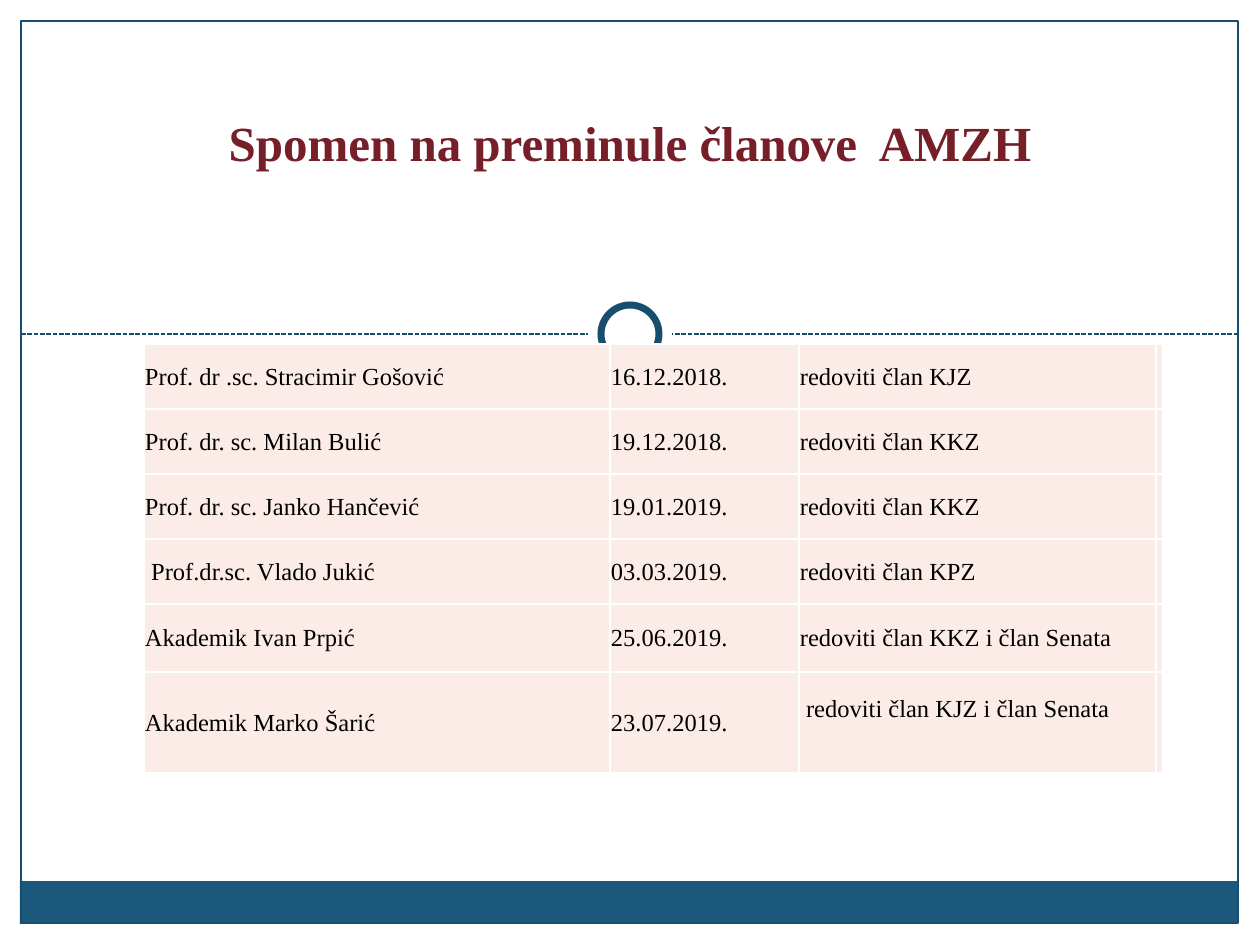
from lxml import etree
from pptx import Presentation
from pptx.dml.color import RGBColor
from pptx.enum.dml import MSO_LINE
from pptx.enum.shapes import MSO_CONNECTOR, MSO_SHAPE
from pptx.enum.text import MSO_ANCHOR, PP_ALIGN
from pptx.oxml.ns import qn
from pptx.util import Emu, Pt

RECT, OVAL = MSO_SHAPE.RECTANGLE, MSO_SHAPE.OVAL
STRAIGHT = MSO_CONNECTOR.STRAIGHT
DASH = MSO_LINE.SQUARE_DOT
MIDDLE, CENTER = MSO_ANCHOR.MIDDLE, PP_ALIGN.CENTER
EMU_PER_PX = 914400 / 126
FONT = "Times New Roman"
WHITE, NAVY, BLUE, ROSE = "FFFFFF", "184E6D", "1B587C", "FCECE7"
TITLE_FORMAT = {"name": FONT, "size": Pt(28), "bold": True}
CELL_FORMAT = {"name": FONT, "size": Pt(14)}

COLUMNS = [466, 189, 357, 6]
ROWS = [65] * 4 + [68, 101]
MEMBERS = [
    ("Prof. dr .sc. Stracimir Gošović", "16.12.2018.", "redoviti član KJZ"),
    ("Prof. dr. sc. Milan Bulić", "19.12.2018.", "redoviti član KKZ"),
    ("Prof. dr. sc. Janko Hančević", "19.01.2019.", "redoviti član KKZ"),
    (" Prof.dr.sc. Vlado Jukić", "03.03.2019.", "redoviti član KPZ"),
    ("Akademik Ivan Prpić", "25.06.2019.", "redoviti član KKZ i član Senata"),
    ("Akademik Marko Šarić", "23.07.2019.", " redoviti član KJZ i član Senata"),
]


def px(n):
    return Emu(round(n * EMU_PER_PX))


def rgb(color):
    return RGBColor.from_string(color)


def write(p, text, color, formats):
    r = p.add_run()
    r.text = text
    r.font.color.rgb = rgb(color)
    for name, value in formats.items():
        setattr(r.font, name, value)


def add_shape(slide, kind, box, fill=None, line=None, width=0):
    sp = slide.shapes.add_shape(kind, *map(px, box))
    sp.shadow.inherit = False
    if fill:
        sp.fill.solid()
        sp.fill.fore_color.rgb = rgb(fill)
    else:
        sp.fill.background()
    if line:
        sp.line.color.rgb = rgb(line)
        sp.line.width = Pt(width)
    else:
        sp.line.fill.background()


def add_divider(slide, x1, x2, y):
    line = slide.shapes.add_connector(STRAIGHT, px(x1), px(y), px(x2), px(y))
    line.line.color.rgb = rgb(NAVY)
    line.line.width = Pt(0.9)
    line.line.dash_style = DASH
    etree.SubElement(line._element.spPr, qn("a:effectLst"))


def add_title(slide, text, box):
    tf = slide.shapes.add_textbox(*map(px, box)).text_frame
    tf.word_wrap = True
    p = tf.paragraphs[0]
    p.alignment = CENTER
    write(p, text, "771F28", TITLE_FORMAT)


def add_borders(cell):
    tcPr = cell._tc.get_or_add_tcPr()
    for i, side in enumerate(("lnL", "lnR", "lnT", "lnB")):
        ln = etree.Element(qn(f"a:{side}"), w=str(Pt(1)))
        fill = etree.SubElement(ln, qn("a:solidFill"))
        etree.SubElement(fill, qn("a:srgbClr"), val=WHITE)
        tcPr.insert(i, ln)


def format_cell(cell):
    margins = {"margin_left": px(1), "margin_right": px(1),
               "margin_top": px(1), "margin_bottom": 0}
    for name, value in margins.items():
        setattr(cell, name, value)
    cell.vertical_anchor = MIDDLE
    cell.fill.solid()
    cell.fill.fore_color.rgb = rgb(ROSE)
    add_borders(cell)


def add_members(slide, left, top):
    table = slide.shapes.add_table(
        len(ROWS), len(COLUMNS), px(left), px(top),
        px(sum(COLUMNS)), px(sum(ROWS))).table
    table.first_row = table.horz_banding = False
    for column, width in zip(table.columns, COLUMNS):
        column.width = px(width)
    for row, height in zip(table.rows, ROWS):
        row.height = px(height)
    for cell in table.iter_cells():
        format_cell(cell)
    for i, member in enumerate(MEMBERS):
        for j, text in enumerate(member):
            write(table.cell(i, j).text_frame.paragraphs[0], text, "000000", CELL_FORMAT)
    table.cell(len(ROWS) - 1, 2).margin_bottom = px(28)


def main():
    prs = Presentation()
    prs.slide_width, prs.slide_height = px(1260), px(945)
    slide = prs.slides.add_slide(prs.slide_layouts[6])
    add_shape(slide, RECT, (20, 881, 1217, 43), fill=BLUE)
    add_divider(slide, 21, 1239, 334)
    add_shape(slide, RECT, (21, 21, 1217, 902), line=NAVY, width=0.75)
    add_shape(slide, OVAL, (588, 291, 84, 84), fill=WHITE)
    add_shape(slide, OVAL, (601, 305, 58, 58), fill=WHITE, line=NAVY, width=4)
    add_title(slide, "Spomen na preminule članove  AMZH", (64, 106, 1132, 72))
    add_members(slide, 144, 344)
    prs.save("out.pptx")


if __name__ == "__main__":
    main()
